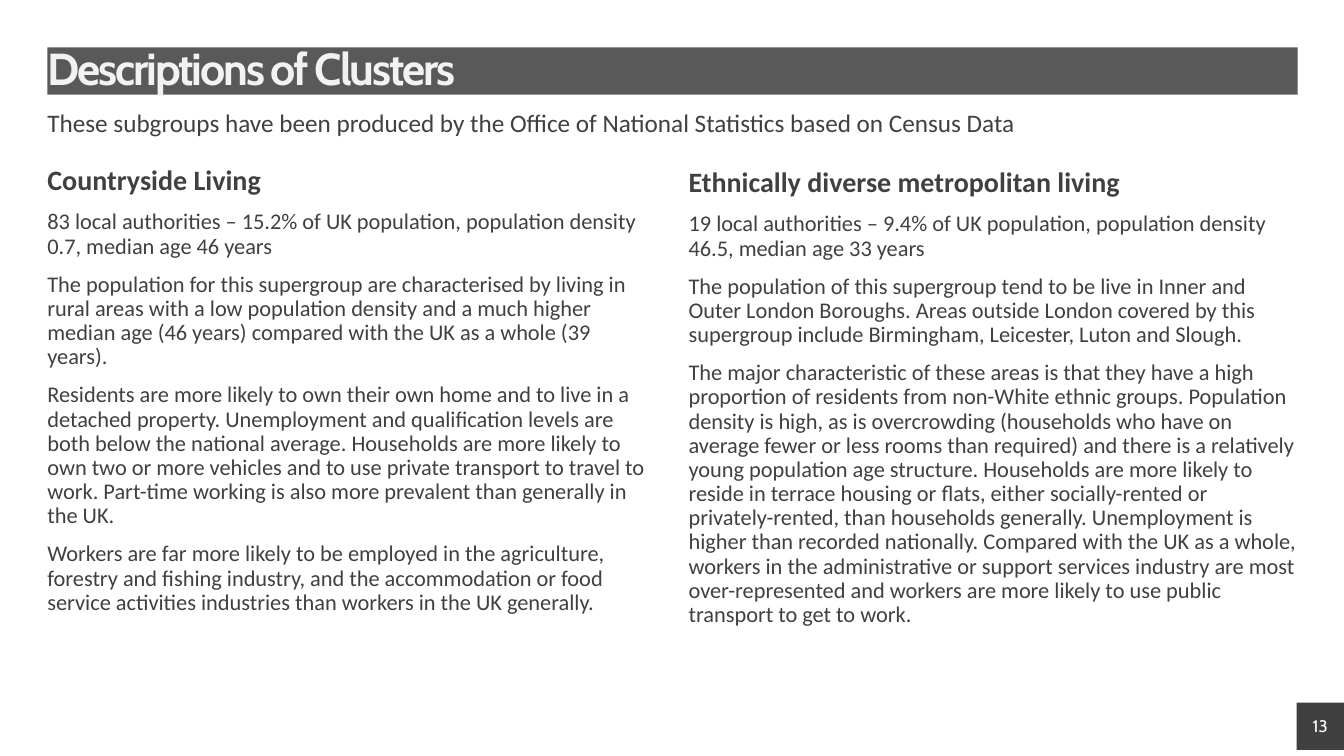
from dataclasses import dataclass

from pptx import Presentation
from pptx.dml.color import RGBColor
from pptx.enum.shapes import MSO_SHAPE as Shape
from pptx.enum.text import MSO_ANCHOR as Anchor, PP_ALIGN as Align
from pptx.util import Pt

PX = 9144  # EMU per px, 100 px to the inch

WHITE = RGBColor(0xFF, 0xFF, 0xFF)
PALE = RGBColor(0xF2, 0xF2, 0xF2)
GREY = RGBColor(0x59, 0x59, 0x59)
DARK = RGBColor(0x40, 0x40, 0x40)

LEFT, RIGHT = 47, 683
WIDE, HALF, UNIT = 1240, 603, 47


@dataclass(frozen=True)
class Style:
    size: int
    color: RGBColor = DARK
    name: str = "Calibri"
    bold: bool = False
    track: int = 0  # letter spacing in 1/100 pt
    align: Align = Align.LEFT
    line: float = 0.9
    before: int = 10


@dataclass(frozen=True)
class Box:
    left: int
    top: int
    width: int
    height: int
    text: list[tuple[str, Style]]
    fill: RGBColor | None = None


TITLE = Style(32, PALE, "Cabin", bold=True, track=-150, before=0)
INTRO = Style(18)
HEAD = Style(20, bold=True)
BODY = Style(16)
PAGE = Style(12, WHITE, "Cabin", align=Align.CENTER, line=1.0, before=0)


def column(left: int, top: int, head: str, *body: str) -> Box:
    text = [(head, HEAD)] + [(part, BODY) for part in body]
    return Box(left, top, HALF, 512, text)


BOXES = [
    # Title bar and introduction
    Box(LEFT, 47, WIDE, UNIT, [("Descriptions of Clusters", TITLE)], GREY),
    Box(LEFT, 110, WIDE, 39, [(
        "These subgroups have been produced by the Office of National "
        "Statistics based on Census Data", INTRO)]),
    # Cluster columns
    column(
        LEFT, 165, "Countryside Living",
        "83 local authorities – 15.2% of UK population, population density "
        "0.7, median age 46 years",
        "The population for this supergroup are characterised by living in "
        "rural areas with a low population density and a much higher median "
        "age (46 years) compared with the UK as a whole (39 years).",
        "Residents are more likely to own their own home and to live in a "
        "detached property. Unemployment and qualification levels are both "
        "below the national average. Households are more likely to own two "
        "or more vehicles and to use private transport to travel to work. "
        "Part-time working is also more prevalent than generally in the UK.",
        "Workers are far more likely to be employed in the agriculture, "
        "forestry and fishing industry, and the accommodation or food "
        "service activities industries than workers in the UK generally."),
    column(
        RIGHT, 167, "Ethnically diverse metropolitan living",
        "19 local authorities – 9.4% of UK population, population density "
        "46.5, median age 33 years",
        "The population of this supergroup tend to be live in Inner and "
        "Outer London Boroughs. Areas outside London covered by this "
        "supergroup include Birmingham, Leicester, Luton and Slough.",
        "The major characteristic of these areas is that they have a high "
        "proportion of residents from non-White ethnic groups. Population "
        "density is high, as is overcrowding (households who have on average "
        "fewer or less rooms than required) and there is a relatively young "
        "population age structure. Households are more likely to reside in "
        "terrace housing or flats, either socially-rented or "
        "privately-rented, than households generally. Unemployment is higher "
        "than recorded nationally. Compared with the UK as a whole, workers "
        "in the administrative or support services industry are most "
        "over-represented and workers are more likely to use public "
        "transport to get to work."),
    # Page number
    Box(1286, 697, UNIT, UNIT, [("13", PAGE)], DARK),
]


def assign(target, values: dict) -> None:
    for key, value in values.items():
        setattr(target, key, value)


def write(para, text: str, style: Style) -> None:
    assign(para, {"alignment": style.align, "line_spacing": style.line,
                  "space_before": Pt(style.before)})
    run = para.add_run()
    run.text = text
    assign(run.font, {"size": Pt(style.size), "name": style.name,
                      "bold": style.bold})
    run.font.color.rgb = style.color
    if style.track:
        run.font._element.set("spc", str(style.track))


def draw(slide, box: Box) -> None:
    area = [n * PX for n in (box.left, box.top, box.width, box.height)]
    if box.fill is None:
        shape = slide.shapes.add_textbox(*area)
    else:
        shape = slide.shapes.add_shape(Shape.RECTANGLE, *area)
        shape.shadow.inherit = False
        shape.fill.solid()
        shape.fill.fore_color.rgb = box.fill
        shape.line.fill.background()
    frame = shape.text_frame
    assign(frame, {
        "word_wrap": True, "margin_left": 0, "margin_top": 0,
        "margin_right": 0, "margin_bottom": 0,
        "vertical_anchor": Anchor.MIDDLE if box.fill else Anchor.TOP})
    for i, (text, style) in enumerate(box.text):
        para = frame.add_paragraph() if i else frame.paragraphs[0]
        write(para, text, style)


def main() -> None:
    deck = Presentation()
    assign(deck, {"slide_width": 1333 * PX, "slide_height": 750 * PX})
    slide = deck.slides.add_slide(deck.slide_layouts[6])
    for box in BOXES:
        draw(slide, box)
    deck.save("out.pptx")


if __name__ == "__main__":
    main()
